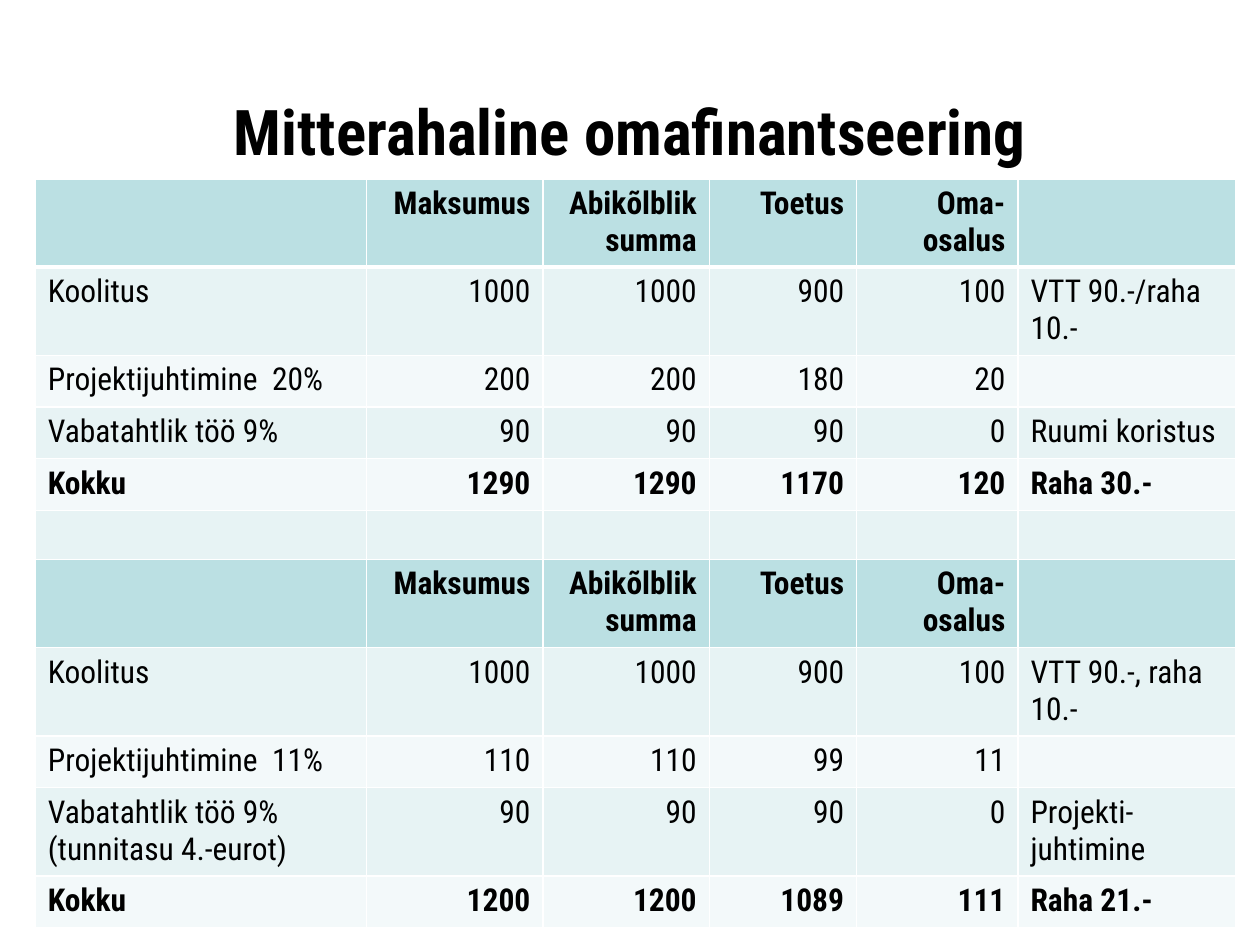
from lxml.etree import SubElement
from pptx import Presentation
from pptx.dml.color import RGBColor
from pptx.enum.text import MSO_ANCHOR as Anchor, PP_ALIGN as Align
from pptx.oxml.ns import qn
from pptx.util import Inches, Pt

BLACK = RGBColor(0x00, 0x00, 0x00)
WHITE = RGBColor(0xFF, 0xFF, 0xFF)
TEAL = RGBColor(0xBB, 0xE0, 0xE3)
PALE = RGBColor(0xE7, 0xF3, 0xF4)
PALEST = RGBColor(0xF3, 0xF9, 0xFA)

HEADER = ["", "Maksumus", "Abikõlblik summa", "Toetus", "Oma-osalus", ""]
BUDGET = [
    HEADER,
    ["Koolitus", "1000", "1000", "900", "100", "VTT 90.-/raha 10.-"],
    ["Projektijuhtimine  20%", "200", "200", "180", "20", ""],
    ["Vabatahtlik töö 9%", "90", "90", "90", "0", "Ruumi koristus"],
    ["Kokku", "1290", "1290", "1170", "120", "Raha 30.-"],
    [""] * len(HEADER),
    HEADER,
    ["Koolitus", "1000", "1000", "900", "100", "VTT 90.-, raha 10.-"],
    ["Projektijuhtimine  11%", "110", "110", "99", "11", ""],
    ["Vabatahtlik töö 9% (tunnitasu 4.-eurot)", "90", "90", "90", "0", "Projekti-juhtimine"],
    ["Kokku", "1200", "1200", "1089", "111", "Raha 21.-"],
]
COLUMN_WIDTHS = [2.63, 1.4, 1.32, 1.17, 1.28, 1.73]
SINGLE, DOUBLE, GAP = 0.41, 0.69, 0.39
ROW_HEIGHTS = [DOUBLE, DOUBLE, SINGLE, SINGLE, SINGLE, GAP,
               DOUBLE, DOUBLE, SINGLE, DOUBLE, SINGLE]


class SlideBuilder:
    font_name = "Roboto Condensed"
    body_size = 18
    title_size = 36

    def __init__(self, slide):
        self.slide = slide

    def text_run(self, paragraph, text, size, bold, align):
        paragraph.alignment = align
        run = paragraph.add_run()
        run.text = text
        run.font.name = self.font_name
        run.font.size = Pt(size)
        run.font.bold = bold
        run.font.color.rgb = BLACK

    def title(self, text, left, top, width, height):
        shape = self.slide.shapes.add_textbox(
            Inches(left), Inches(top), Inches(width), Inches(height))
        frame = shape.text_frame
        frame.word_wrap = True
        frame.vertical_anchor = Anchor.MIDDLE
        self.text_run(frame.paragraphs[0], text, self.title_size, True, Align.CENTER)

    def borders(self, cell, top, bottom):
        properties = cell._tc.get_or_add_tcPr()
        for side, points in (("L", 1), ("R", 1), ("T", top), ("B", bottom)):
            line = SubElement(properties, qn(f"a:ln{side}"), w=str(Pt(points)))
            fill = SubElement(line, qn("a:solidFill"))
            SubElement(fill, qn("a:srgbClr"), val=str(WHITE))

    def cell(self, cell, text, color, bold, align, top, bottom):
        self.borders(cell, top, bottom)
        cell.fill.solid()
        cell.fill.fore_color.rgb = color
        paragraph = cell.text_frame.paragraphs[0]
        if text:
            self.text_run(paragraph, text, self.body_size, bold, align)
        else:
            SubElement(paragraph._p, qn("a:endParaRPr"), sz="1600")

    def table(self, rows, left, top, widths, heights):
        table = self.slide.shapes.add_table(
            len(rows), len(widths), Inches(left), Inches(top),
            Inches(sum(widths)), Inches(sum(heights))).table
        table.first_row = False
        table.horz_banding = False
        for column, width in zip(table.columns, widths):
            column.width = Inches(width)
        for index, (values, height) in enumerate(zip(rows, heights)):
            table.rows[index].height = Inches(height)
            is_header = values is HEADER
            bold = is_header or values[0] == "Kokku"
            color = TEAL if is_header else PALE if index % 2 else PALEST
            top_line = 3 if index == 1 else 1
            bottom_line = 3 if index == 0 else 1
            for position, text in enumerate(values):
                is_amount = 0 < position < len(values) - 1
                align = Align.RIGHT if is_amount else Align.LEFT
                self.cell(table.cell(index, position), text, color, bold,
                          align, top_line, bottom_line)


def main():
    presentation = Presentation()
    presentation.slide_width = Inches(10)
    presentation.slide_height = Inches(7.5)
    slide = presentation.slides.add_slide(presentation.slide_layouts[6])
    builder = SlideBuilder(slide)
    builder.title("Mitterahaline omafinantseering", 0.5, 0.52, 9, 1.02)
    builder.table(BUDGET, 0.28, 1.42, COLUMN_WIDTHS, ROW_HEIGHTS)
    presentation.save("out.pptx")


if __name__ == "__main__":
    main()
